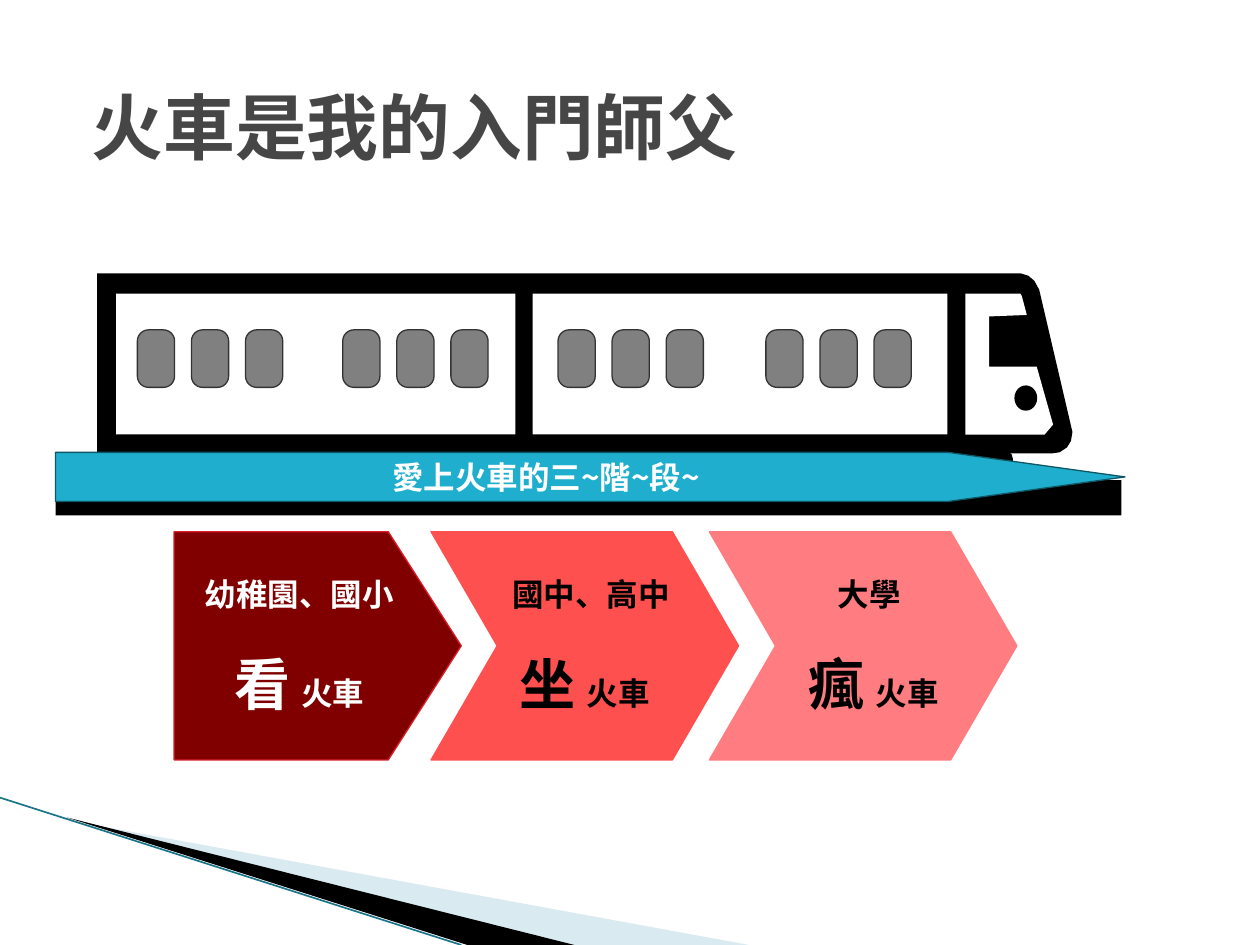
import lxml.etree
import pptx
import pptx.dml.color
import pptx.enum.shapes
import pptx.enum.text
import pptx.oxml
import pptx.oxml.ns
import pptx.util

Cm, Pt = pptx.util.Cm, pptx.util.Pt
KIND = pptx.enum.shapes.MSO_SHAPE
ALIGN = pptx.enum.text.PP_ALIGN
qn = pptx.oxml.ns.qn

HUES = {
    "ink": "000000", "paper": "FFFFFF", "title": "464646",
    "mist": "A0CBDC", "edge": "1C7488",
    "glass": "808080", "frame": "333333",
    "banner": "1FAECD", "rim": "105766",
    "dark": "800000", "red": "DA1F28", "mid": "FF5050", "light": "FF7C80",
}


class Deck:
    """Holds the style and the current slide, and draws each kind of element."""

    def __init__(self):
        self.file = pptx.Presentation()
        self.file.slide_width, self.file.slide_height = Cm(25.4), Cm(19.05)
        self.slide = self.file.slides.add_slide(self.file.slide_layouts[6])
        self.shapes = self.slide.shapes

    def hue(self, name):
        return pptx.dml.color.RGBColor.from_string(HUES[name])

    def paint(self, shape, fill, line=None, alpha=None):
        shape.shadow.inherit = False
        shape.fill.solid()
        shape.fill.fore_color.rgb = self.hue(fill)
        if alpha:
            tint = shape.fill._xPr.find(qn("a:solidFill"))[0]
            lxml.etree.SubElement(tint, qn("a:alpha")).set("val", str(alpha * 1000))
        if line:
            shape.line.color.rgb = self.hue(line)
            shape.line.width = Pt(0.75)
        else:
            shape.line.fill.background()
        return shape

    def shape(self, kind, box, fill, line=None, adj=None):
        item = self.shapes.add_shape(kind, *map(Cm, box))
        if adj is not None:
            item.adjustments[0] = adj
        return self.paint(item, fill, line)

    def outline(self, points, fill, alpha=None):
        spots = [(Cm(x), Cm(y)) for x, y in points]
        pen = self.shapes.build_freeform(*spots[0], scale=1.0)
        pen.add_line_segments(spots[1:], close=True)
        return self.paint(pen.convert_to_shape(), fill, alpha=alpha)

    def line(self, start, end, color):
        item = self.shapes.add_connector(
            pptx.enum.shapes.MSO_CONNECTOR.STRAIGHT, *map(Cm, start + end))
        item.line.color.rgb = self.hue(color)
        item.line.width = Pt(0.95)
        lxml.etree.SubElement(item._element.spPr, qn("a:effectLst"))

    def frame(self, shape, inset=0.0):
        body = shape.text_frame
        body.word_wrap = True
        body.vertical_anchor = pptx.enum.text.MSO_ANCHOR.MIDDLE
        body.margin_left = body.margin_right = Cm(inset)
        body.margin_top = body.margin_bottom = Cm(0)
        return body

    def label(self, para, runs, color, face, align=ALIGN.CENTER, indent=0):
        para.alignment = align
        if indent:
            para._p.get_or_add_pPr().set("marL", str(Pt(indent)))
        font = para.font
        font.bold, font.name = True, face
        font.color.rgb = self.hue(color)
        if len(runs) == 1:
            font.size = Pt(runs[0][1])
        for text, size in runs:
            run = para.add_run()
            run.text = text
            if len(runs) > 1:
                run.font.size = Pt(size)
        east = lxml.etree.SubElement(font._element, qn("a:ea"))
        east.set("typeface", face)

    def title(self, text, box):
        item = self.shapes.add_textbox(*map(Cm, box))
        body = self.frame(item, 0.25)
        self.label(body.paragraphs[0], [(text, 41)], "title", "Courier New", ALIGN.LEFT)

    def stage(self, shape, age, verb, color, shifts):
        body = self.frame(shape)
        face = "DejaVu Sans"
        self.label(body.paragraphs[0], [(age, 18)], color, face, indent=shifts[0])
        last = body.add_paragraph()
        last.space_before = Pt(21)
        self.label(last, [(verb, 32), (" 火車", 18)], color, face, indent=shifts[1])


def train(deck):
    deck.outline([(1.96, 5.51), (20.57, 5.51), (20.73, 5.56), (20.85, 5.66),
                  (20.95, 5.84), (20.98, 5.97), (21.62, 8.71), (21.59, 8.89),
                  (21.51, 9.02), (21.36, 9.12), (21.21, 9.14), (1.96, 9.17)], "ink")
    for left, width in ((2.34, 8.05), (10.74, 8.36)):
        deck.shape(KIND.RECTANGLE, (left, 5.92, width, 2.84), "paper")
    deck.outline([(19.46, 5.92), (20.57, 5.92), (20.6, 5.97), (20.7, 6.35),
                  (19.94, 6.38), (19.94, 7.39), (20.9, 7.39), (21.23, 8.56),
                  (21.06, 8.76), (19.46, 8.76)], "paper")
    deck.shape(KIND.OVAL, (20.45, 7.77, 0.46, 0.51), "ink")
    deck.shape(KIND.RECTANGLE, (1.12, 9.68, 21.49, 0.71), "ink")
    for start in (2.77, 6.91, 11.25, 15.44):
        for seat in range(3):
            deck.shape(KIND.ROUNDED_RECTANGLE, (start + seat * 1.09, 6.65, 0.75, 1.16),
                       "glass", "frame", 0.3)
    for left, width in ((3, 7.01), (11.23, 9.19)):
        deck.shape(KIND.ROUNDED_RECTANGLE, (left, 9.07, width, 0.61), "ink", adj=0.3)


def main():
    deck = Deck()
    deck.outline([(1.4, 16.54), (15.1, 19.05), (11.58, 19.05)], "mist", 40)
    deck.outline([(1.35, 16.48), (11.58, 19.05), (9.42, 19.05)], "ink")
    deck.line((0, 16.08), (9.3, 19.05), "edge")
    train(deck)
    deck.title("火車是我的入門師父", (1.6, 0.84, 22.23, 3.38))

    stages = [
        (KIND.PENTAGON, 3.51, 5.79, 0.32, "dark", "red", "幼稚園、國小", "看", "paper", (0, 0)),
        (KIND.CHEVRON, 8.69, 6.2, 0.29, "mid", "mid", "國中、高中", "坐", "ink", (7, 0)),
        (KIND.CHEVRON, 14.3, 6.2, 0.29, "light", "light", "大學", "瘋", "ink", (7, 12)),
    ]
    for kind, left, width, adj, fill, line, age, verb, color, shifts in stages:
        step = deck.shape(kind, (left, 10.72, width, 4.6), fill, line, adj)
        deck.stage(step, age, verb, color, shifts)

    banner = deck.shape(KIND.PENTAGON, (1.12, 9.12, 21.56, 0.99), "banner", "rim", 3.6)
    deck.label(deck.frame(banner).paragraphs[0], [("愛上火車的三~階~段~", 18)],
               "paper", "Noto Sans CJK SC")
    deck.file.save("out.pptx")


if __name__ == "__main__":
    main()
